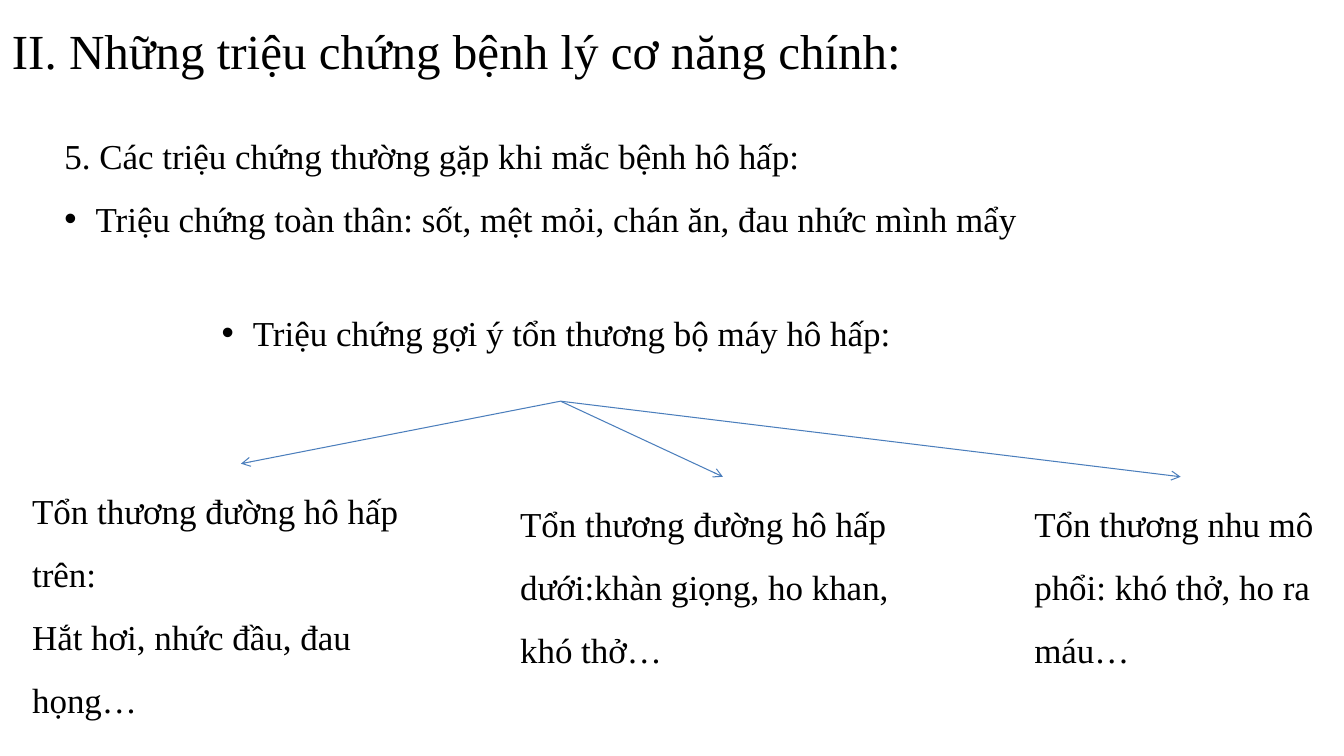
from lxml import etree
from pptx import Presentation
from pptx import util as u
from pptx.dml.color import RGBColor
from pptx.enum import shapes, text
from pptx.oxml.ns import qn

PX = 9144  # EMU per px, 100 px to the inch
COLORS = {"bg": "FFFFFF", "text": "000000", "arrow": "4B7EBC"}
FONT = "Times New Roman"
BULLET_INDENT = 31


def add_text(box, paragraphs, size=25, spacing=1.5, bullets=()):
    tf = s.shapes.add_textbox(*(v * PX for v in box)).text_frame
    tf.word_wrap = True
    tf.auto_size = text.MSO_AUTO_SIZE.NONE
    for i, line in enumerate(paragraphs):
        p = tf.paragraphs[0] if i == 0 else tf.add_paragraph()
        p.text = line
        p.line_spacing = spacing
        r = p.runs[0]
        r.font.name = FONT
        r.font.size = u.Pt(size)
        r.font.color.rgb = RGBColor.from_string(COLORS["text"])
        if i in bullets:
            pPr = p._p.get_or_add_pPr()
            pPr.set("marL", str(BULLET_INDENT * PX))
            pPr.set("indent", str(-BULLET_INDENT * PX))
            etree.SubElement(pPr, qn("a:buFont"), typeface="Arial")
            etree.SubElement(pPr, qn("a:buChar"), char="•")


prs = Presentation()
prs.slide_width, prs.slide_height = 1333 * PX, 750 * PX
s = prs.slides.add_slide(prs.slide_layouts[6])
s.background.fill.solid()
s.background.fill.fore_color.rgb = RGBColor.from_string(COLORS["bg"])

# Title and general symptoms
add_text((2, 15, 1333, 69), ["II. Những triệu chứng bệnh lý cơ năng chính:"],
         size=35, spacing=1.0)
add_text((54, 108, 1277, 136),
         ["5. Các triệu chứng thường gặp khi mắc bệnh hô hấp:",
          "Triệu chứng toàn thân: sốt, mệt mỏi, chán ăn, đau nhức mình mẩy"],
         bullets=[1])

# Root of the tree
add_text((210, 304, 692, 94), ["Triệu chứng gợi ý tổn thương bộ máy hô hấp:"],
         spacing=1.0, bullets=[0])

# Branches: text box, paragraphs, arrow tip
branches = [
    ((22, 460, 433, 263),
     ["Tổn thương đường hô hấp trên:", "Hắt hơi, nhức đầu, đau họng…"],
     (239, 460)),
    ((506, 473, 422, 199),
     ["Tổn thương đường hô hấp dưới:khàn giọng, ho khan, khó thở…"],
     (717, 473)),
    ((1016, 473, 311, 199),
     ["Tổn thương nhu mô phổi: khó thở, ho ra máu…"],
     (1171, 473)),
]
root = (556, 398)
for box, paragraphs, tip in branches:
    add_text(box, paragraphs)
    arrow = s.shapes.add_connector(shapes.MSO_CONNECTOR.STRAIGHT,
                                   *(v * PX for v in root + tip))
    arrow.line.width = u.Pt(0.75)
    arrow.line.color.rgb = RGBColor.from_string(COLORS["arrow"])
    etree.SubElement(arrow.line._get_or_add_ln(), qn("a:tailEnd"), type="arrow")
    etree.SubElement(arrow._element.spPr, qn("a:effectLst"))

prs.save("out.pptx")
